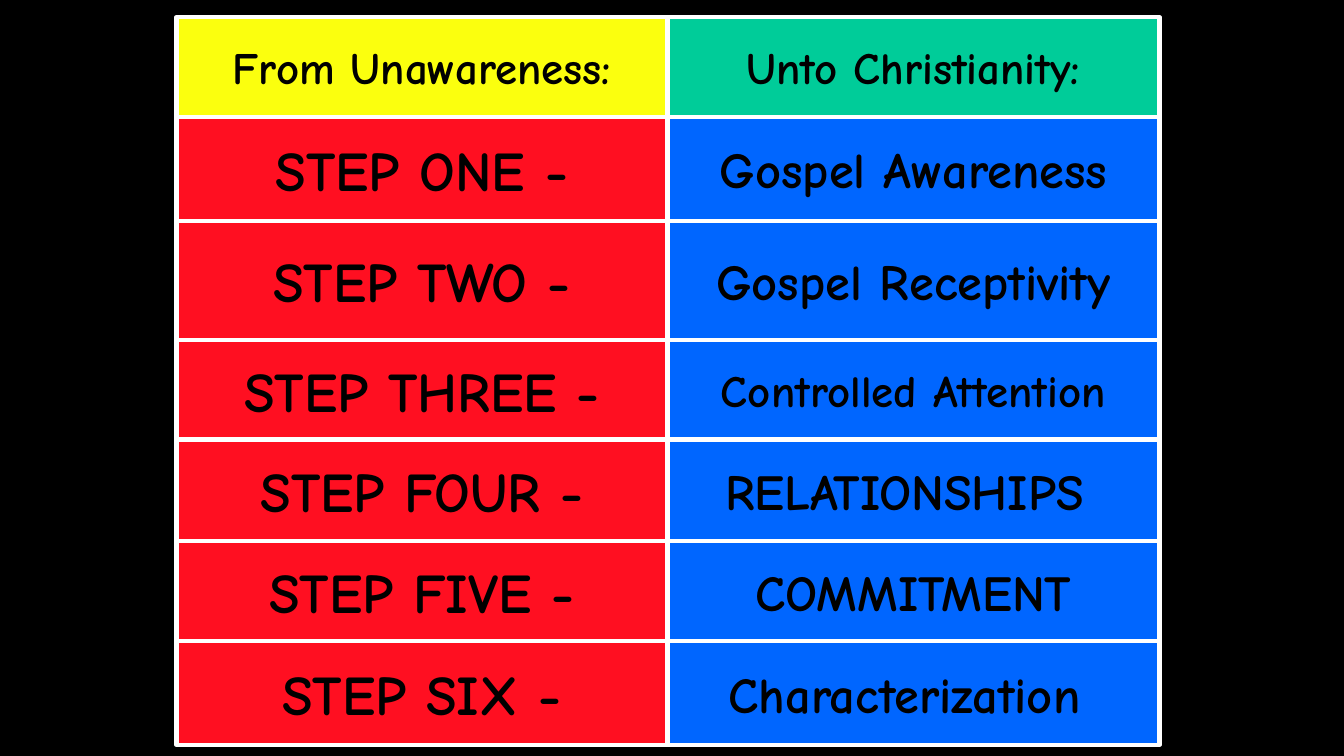
from dataclasses import dataclass

from pptx import Presentation
from pptx import util as u
from pptx.dml.color import RGBColor
from pptx.enum import shapes, text
from pptx.oxml.ns import qn


@dataclass(frozen=True)
class Theme:
    font: str = "Comic Neue"
    background: str = "000000"
    ink: str = "000000"
    rule: str = "FFFFFF"
    start: str = "FBFF0E"
    goal: str = "00CC99"
    step: str = "FF0F21"
    stage: str = "0066FF"
    small: int = 32
    medium: int = 36
    large: int = 40
    rule_width: int = 3


THEME = Theme()
COLUMNS = [1.75, 6.62, 11.5]
ROWS = [0.17, 1.16, 2.19, 3.37, 4.36, 5.37, 6.36, 7.39]
STAGES = [
    ("STEP ONE -", "Gospel Awareness", THEME.medium),
    ("STEP TWO -", "Gospel Receptivity", THEME.medium),
    ("STEP THREE -", "Controlled Attention", THEME.small),
    ("STEP FOUR -", "RELATIONSHIPS ", THEME.medium),
    ("STEP FIVE -", "COMMITMENT", THEME.medium),
    ("STEP SIX -", "Characterization ", THEME.medium),
]


def write(tf, content, *, size, color, font, bold=True):
    p = tf.paragraphs[0]
    p.alignment = text.PP_ALIGN.CENTER
    r = p.add_run()
    r.text = content
    r.font.size = u.Pt(size)
    r.font.name = font
    r.font.bold = bold
    r.font.color.rgb = RGBColor.from_string(color)


class Board:
    def __init__(self, s, theme):
        self.s = s
        self.theme = theme
        fill = s.background.fill
        fill.solid()
        fill.fore_color.rgb = RGBColor.from_string(theme.background)

    def style_line(self, line):
        line.color.rgb = RGBColor.from_string(self.theme.rule)
        line.width = u.Pt(self.theme.rule_width)

    def cell(self, row, col, content, fill, size):
        """Fill the grid cell at row and col with a coloured, centred label."""
        left, right = COLUMNS[col:col + 2]
        top, bottom = ROWS[row:row + 2]
        sp = self.s.shapes.add_shape(
            shapes.MSO_SHAPE.RECTANGLE, u.Inches(left), u.Inches(top),
            u.Inches(right - left), u.Inches(bottom - top))
        sp.shadow.inherit = False
        sp.fill.solid()
        sp.fill.fore_color.rgb = RGBColor.from_string(fill)
        self.style_line(sp.line)
        tf = sp.text_frame
        tf.word_wrap = True
        tf.vertical_anchor = text.MSO_ANCHOR.MIDDLE
        write(tf, content, size=size, color=self.theme.ink, font=self.theme.font)

    def rule(self, x1, y1, x2, y2):
        line = self.s.shapes.add_connector(
            shapes.MSO_CONNECTOR.STRAIGHT,
            u.Inches(x1), u.Inches(y1), u.Inches(x2), u.Inches(y2))
        self.style_line(line.line)
        sp_pr = line._element.spPr
        sp_pr.append(sp_pr.makeelement(qn("a:effectLst"), {}))


def main():
    prs = Presentation()
    prs.slide_width = u.Inches(13.33)
    prs.slide_height = u.Inches(7.5)
    board = Board(prs.slides.add_slide(prs.slide_layouts[6]), THEME)

    board.cell(0, 0, "From Unawareness:", THEME.start, THEME.small)
    board.cell(0, 1, "Unto Christianity:", THEME.goal, THEME.small)
    for row, (step, stage, size) in enumerate(STAGES, start=1):
        board.cell(row, 0, step, THEME.step, THEME.large)
        board.cell(row, 1, stage, THEME.stage, size)

    for y in ROWS:
        board.rule(COLUMNS[0], y, COLUMNS[-1], y)
    for x in COLUMNS:
        board.rule(x, ROWS[0], x, ROWS[-1])

    prs.save("out.pptx")


if __name__ == "__main__":
    main()
